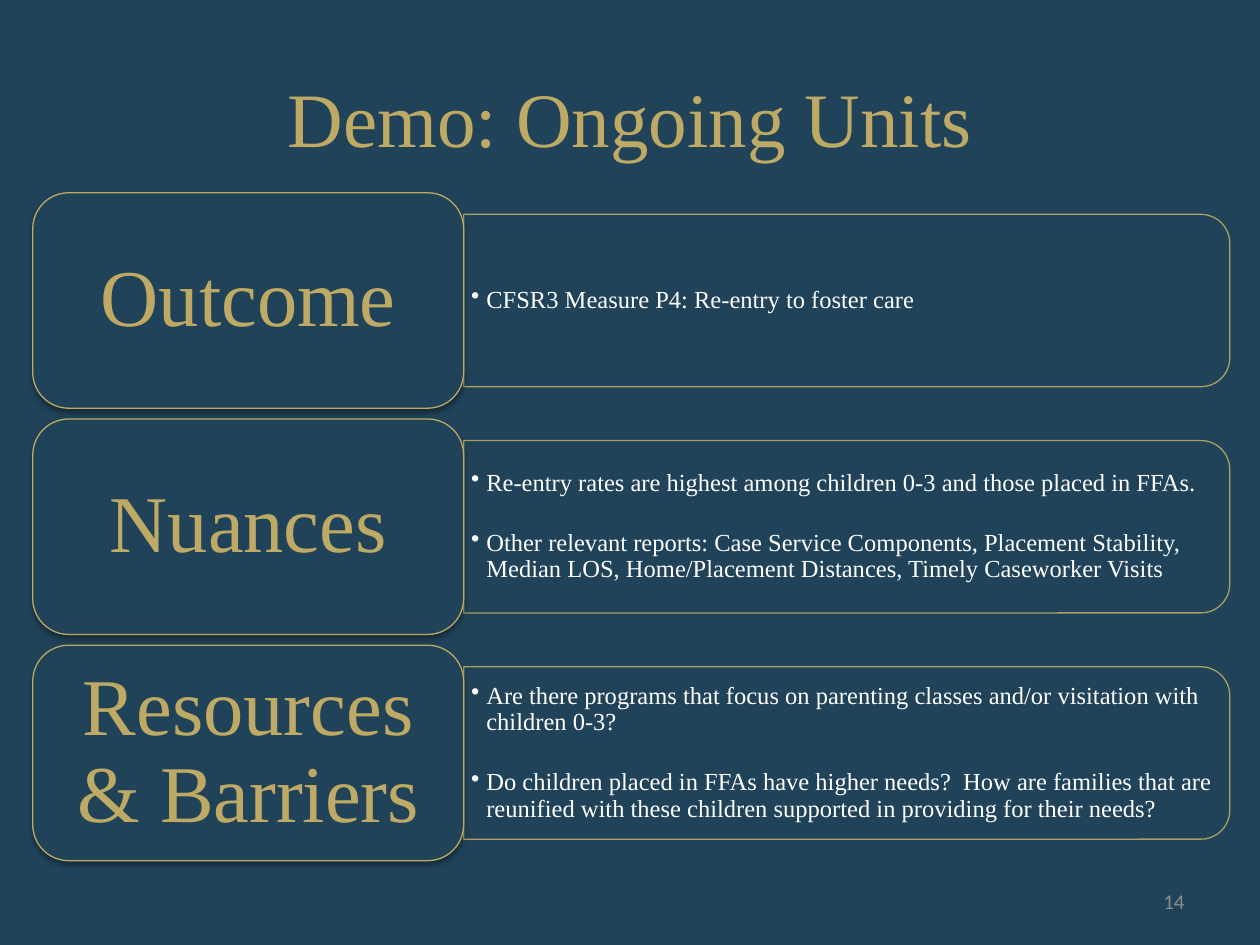
from lxml.etree import SubElement
from pptx import Presentation
from pptx.dml.color import RGBColor
from pptx.enum.shapes import MSO_SHAPE
from pptx.enum.text import MSO_ANCHOR, PP_ALIGN
from pptx.oxml.ns import qn
from pptx.util import Inches, Pt

TITLE = "Demo: Ongoing Units"
PAGE = "14"
ROWS = [
    ("Outcome", 17, ["CFSR3 Measure P4: Re-entry to foster care"]),
    ("Nuances", 23, [
        "Re-entry rates are highest among children 0-3 and those placed in FFAs.",
        "Other relevant reports: Case Service Components, Placement Stability, "
        "Median LOS, Home/Placement Distances, Timely Caseworker Visits",
    ]),
    ("Resources & Barriers", 19, [
        "Are there programs that focus on parenting classes and/or visitation "
        "with children 0-3?",
        "Do children placed in FFAs have higher needs?  How are families that "
        "are reunified with these children supported in providing for their needs?",
    ]),
]
NAVY, GOLD, WHITE, GRAY = "204359", "BEAA64", "FFFFFF", "8C8C8C"
SERIF, SANS = "Times New Roman", "Calibri"
LEFT, TOP = 0.26, 1.53
WIDE, TALL = 9.5, 1.71
STEP = TALL * 1.05
SPLIT = WIDE * 0.36
DEEP = TALL * 0.8


def color(code):
    return RGBColor.from_string(code)


def box(left, top, wide, tall):
    return [Inches(v) for v in (left, top, wide, tall)]


def write(para, text, size, tint, font=SERIF):
    run = para.add_run()
    run.text = text
    run.font.size = Pt(size)
    run.font.name = font
    run.font.color.rgb = color(tint)


def setup(frame, side=0.1, edge=0.05):
    frame.word_wrap = True
    frame.vertical_anchor = MSO_ANCHOR.MIDDLE
    frame.margin_left = frame.margin_right = Inches(side)
    frame.margin_top = frame.margin_bottom = Inches(edge)
    return frame


def fade(fill, share):
    tint = fill._xPr.find(qn("a:solidFill"))[0]
    SubElement(tint, qn("a:alpha"), val=str(share * 1000))


def outline(kind, place):
    shape = slide.shapes.add_shape(kind, *place)
    shape.shadow.inherit = False
    shape.fill.solid()
    shape.fill.fore_color.rgb = color(NAVY)
    shape.line.color.rgb = color(GOLD)
    shape.line.width = Pt(0.75)
    return shape


def shade(shape):
    glow = shape._element.spPr.find(qn("a:effectLst"))
    drop = SubElement(glow, qn("a:outerShdw"), blurRad=str(Pt(3.1)),
                      dist=str(Pt(1.8)), dir="5400000", rotWithShape="0")
    tint = SubElement(drop, qn("a:srgbClr"), val="000000")
    SubElement(tint, qn("a:alpha"), val="35000")


def bullet(para):
    props = para._p.get_or_add_pPr()
    props.set("marL", str(Inches(0.12)))
    props.set("indent", str(Inches(-0.12)))
    SubElement(props, qn("a:buChar"), char="•")


def panel(mid, share, lines):
    long = WIDE - SPLIT
    center = LEFT + SPLIT + long / 2
    shape = outline(MSO_SHAPE.ROUND_2_SAME_RECTANGLE,
                    box(center - DEEP / 2, mid - long / 2, DEEP, long))
    shape.rotation = 90
    fade(shape.fill, share)
    fade(shape.line.fill, 90)
    area = slide.shapes.add_textbox(
        *box(LEFT + SPLIT, mid - 0.62, long - 0.07, 1.24))
    frame = setup(area.text_frame, 0.06, 0.03)
    for at, line in enumerate(lines):
        para = frame.add_paragraph() if at else frame.paragraphs[0]
        para.line_spacing = 0.9
        para.space_after = Pt(19 if at < len(lines) - 1 else 0)
        bullet(para)
        write(para, line, 14, WHITE)


def label(top, text):
    shape = outline(MSO_SHAPE.ROUNDED_RECTANGLE, box(LEFT, top, SPLIT, TALL))
    shade(shape)
    para = setup(shape.text_frame, 0.2, 0.1).paragraphs[0]
    para.alignment = PP_ALIGN.CENTER
    para.line_spacing = 0.9
    write(para, text, 46, GOLD)


deck = Presentation()
deck.slide_width, deck.slide_height = Inches(10), Inches(7.5)
slide = deck.slides.add_slide(deck.slide_layouts[5])
slide.background.fill.solid()
slide.background.fill.fore_color.rgb = color(NAVY)

head = slide.shapes.title
head.left, head.top, head.width, head.height = box(0.5, 0.3, 9, 1.25)
para = setup(head.text_frame).paragraphs[0]
para.alignment = PP_ALIGN.CENTER
write(para, TITLE, 44, GOLD)

for row, (name, share, lines) in enumerate(ROWS):
    top = TOP + row * STEP
    panel(top + TALL / 2, share, lines)
    label(top, name)

foot = slide.shapes.add_textbox(*box(7.17, 6.95, 2.33, 0.4))
para = setup(foot.text_frame).paragraphs[0]
para.alignment = PP_ALIGN.RIGHT
write(para, PAGE, 12, GRAY, SANS)

deck.save("out.pptx")
